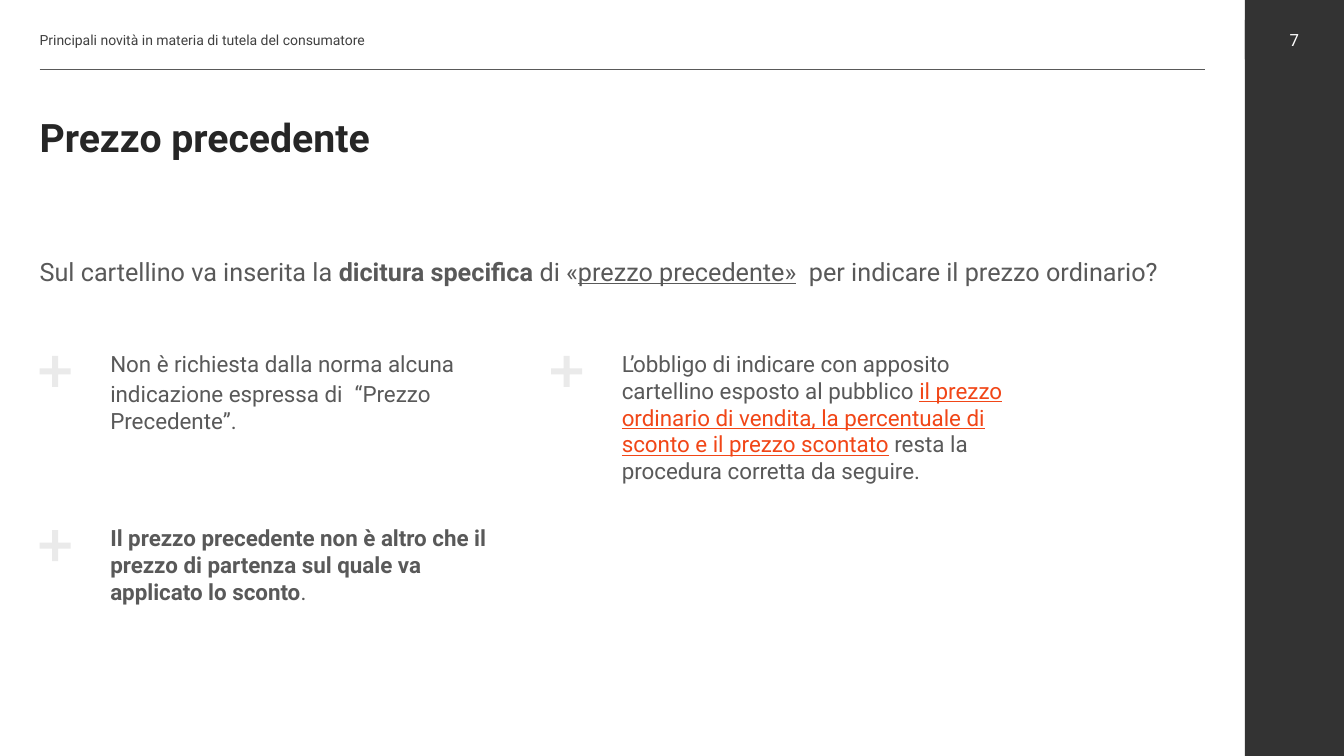
from lxml.etree import SubElement
from pptx import Presentation
from pptx.dml.color import RGBColor
from pptx.enum.shapes import MSO_CONNECTOR, MSO_SHAPE
from pptx.enum.text import MSO_ANCHOR, PP_ALIGN
from pptx.oxml.ns import qn
from pptx.util import Cm, Pt

COLORS = {
    "dark": "333333", "head": "404040", "title": "262626", "body": "595959",
    "plus": "EAEAEA", "accent": "F14617", "white": "FFFFFF",
}


def color(name):
    return RGBColor.from_string(COLORS[name])


def write(frame, text, size=16, ink="body", align=PP_ALIGN.LEFT, space=None,
          anchor=MSO_ANCHOR.TOP, inset=(0, 0, 0, 0), bold=False):
    """Fill a frame with a string, or a list of (string, format) runs."""
    frame.word_wrap = True
    frame.vertical_anchor = anchor
    (frame.margin_left, frame.margin_top,
     frame.margin_right, frame.margin_bottom) = [Cm(n) for n in inset]
    para = frame.paragraphs[0]
    para.alignment = align
    if space:
        para.line_spacing = space
    for part, style in [(text, {})] if isinstance(text, str) else text:
        run = para.add_run()
        run.text = part
        font = run.font
        font.name = "Roboto"
        font.size = Pt(style.get("size", size))
        font.bold = style.get("bold", bold)
        font.underline = style.get("under", False)
        font.color.rgb = color(style.get("ink", ink))


class Page:
    """The current slide and its style."""

    def __init__(self, deck):
        self.shapes = deck.slides.add_slide(deck.slide_layouts[6]).shapes

    def shape(self, kind, left, top, width, height, fill):
        item = self.shapes.add_shape(kind, Cm(left), Cm(top), Cm(width), Cm(height))
        item.shadow.inherit = False
        item.fill.solid()
        item.fill.fore_color.rgb = color(fill)
        item.line.fill.background()
        return item

    def text(self, left, top, width, height, text, **style):
        box = self.shapes.add_textbox(Cm(left), Cm(top), Cm(width), Cm(height))
        write(box.text_frame, text, **style)

    def rule(self, left, right, top):
        line = self.shapes.add_connector(
            MSO_CONNECTOR.STRAIGHT, Cm(left), Cm(top), Cm(right), Cm(top))
        line.line.color.rgb = color("body")
        line.line.width = Pt(0.75)
        SubElement(line._element.spPr, qn("a:effectLst"))

    def point(self, left, top, height, text, **style):
        plus = self.shape(MSO_SHAPE.CROSS, left, top + 0.15, 0.78, 0.78, "plus")
        plus.adjustments[0] = 0.403
        self.text(left + 0.78, top, 12.12, height, text,
                  inset=(1, 0, 1, 1), **style)


def main():
    deck = Presentation()
    deck.slide_width, deck.slide_height = Cm(33.87), Cm(19.05)
    page = Page(deck)

    # Side band and header
    page.shape(MSO_SHAPE.RECTANGLE, 31.37, 0, 2.5, 19.05, "dark")
    page.rule(1, 30.37, 1.75)
    page.text(1, 0.5, 29.37, 1,
              "Principali novità in materia di tutela del consumatore",
              size=10, ink="head", anchor=MSO_ANCHOR.MIDDLE)
    badge = page.shape(MSO_SHAPE.RECTANGLE, 31.37, 0.5, 2.5, 1, "dark")
    write(badge.text_frame, "7", size=12, ink="white",
          align=PP_ALIGN.CENTER, anchor=MSO_ANCHOR.MIDDLE)

    # Title and question
    page.text(1, 3, 30.37, 1.07, "Prezzo precedente", size=28, ink="title",
              bold=True, space=0.9, inset=(0, 0, 1, 0))
    page.text(1, 6.07, 30.37, 1, [
        ("Sul cartellino va inserita la ", {}),
        ("dicitura specifica ", {"bold": True}),
        ("di «", {}),
        ("prezzo precedente»", {"under": True}),
        ("  per indicare il prezzo ordinario?", {}),
    ], size=18, align=PP_ALIGN.JUSTIFY, space=1.5, inset=(0, 0, 1, 0))

    # Answers
    near, far = 1, 13.89
    high, low = 8.82, 13.21
    page.point(near, high, 3.15, [
        ("Non è richiesta dalla norma alcuna indicazione espressa di ", {}),
        (" ", {"size": 18}),
        ("“Prezzo Precedente”.", {}),
    ])
    page.point(near, low, 3.07, [
        ("Il prezzo precedente non è altro che il prezzo di partenza "
         "sul quale va applicato lo sconto", {"bold": True}),
        (".", {}),
    ])
    page.point(far, high, 4.42, [
        ("L’obbligo di indicare con apposito cartellino esposto al pubblico ", {}),
        ("il prezzo ordinario di vendita, la percentuale di sconto "
         "e il prezzo scontato", {"ink": "accent", "under": True}),
        (" resta la procedura corretta da seguire.", {}),
    ])

    deck.save("out.pptx")


if __name__ == "__main__":
    main()
